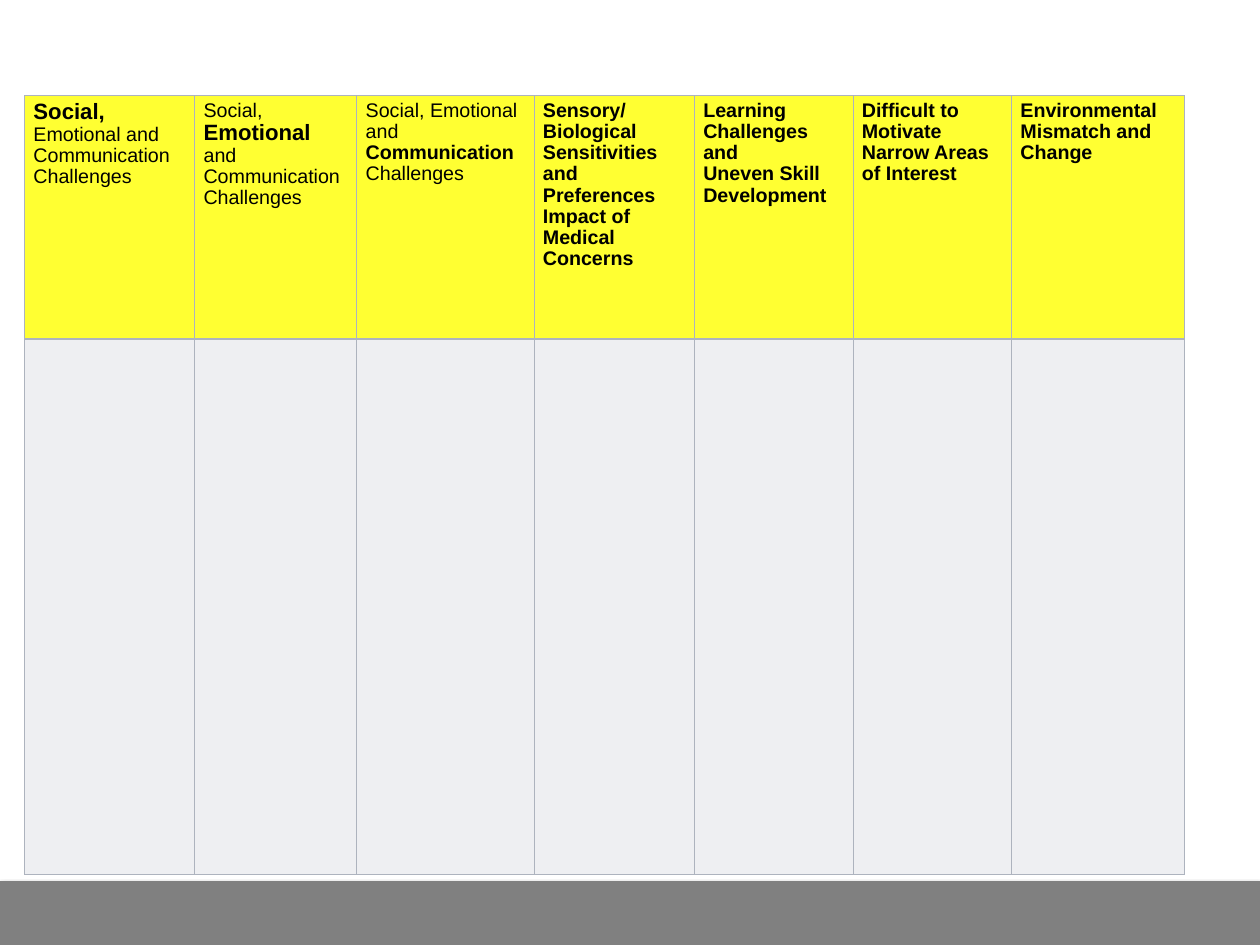
from lxml import etree
from pptx import Presentation
from pptx.dml.color import RGBColor
from pptx.enum.shapes import MSO_SHAPE
from pptx.enum.text import MSO_ANCHOR, PP_ALIGN
from pptx.oxml.ns import qn
from pptx.util import Pt

RECT = MSO_SHAPE.RECTANGLE
TOP = MSO_ANCHOR.TOP
LEFT = PP_ALIGN.LEFT
WIDTH, HEIGHT = 1023.84, 768.24
COLORS = {"page": "FFFFFF", "foot": "808080", "head": "FFFF32",
          "grid": "ADB3BE", "text": "000000"}

COLS = [138.24, 131.76, 144, 130.32, 128.88, 128.88, 140.4]
ROWS = [197.4, 435.6]

# Each heading is a list of paragraphs; each paragraph a list of (text, size, bold).
HEADS = [
    [[("Social, ", 18, True),
      ("Emotional and Communication Challenges", 16, False)]],
    [[("Social, ", 16, False), ("Emotional ", 18, True),
      ("and Communication Challenges", 16, False)]],
    [[("Social, Emotional and ", 16, False), ("Communication ", 16, True),
      ("Challenges", 16, False)]],
] + [[[(line, 16, True)] for line in lines] for lines in (
    ("Sensory/Biological Sensitivities and Preferences",
     "Impact of Medical Concerns"),
    ("Learning Challenges and", "Uneven Skill Development"),
    ("Difficult to Motivate", "Narrow Areas of Interest"),
    ("Environmental Mismatch and", "Change"),
)]


def color(name):
    return RGBColor.from_string(COLORS[name])


def node(parent, tag, **attrs):
    """Add an XML child such as a:ln with the given attributes."""
    return etree.SubElement(parent, qn(tag),
                            {key: str(val) for key, val in attrs.items()})


def write(para, text, size=16, bold=False, font="Arial", tint="text"):
    """Add one formatted run to a paragraph."""
    run = para.add_run()
    run.text = text
    run.font.name = font
    run.font.size = Pt(size)
    run.font.bold = bold
    run.font.color.rgb = color(tint)


class Page:
    def __init__(self, slide):
        self.slide = slide
        back = slide.background.fill
        back.solid()
        back.fore_color.rgb = color("page")

    def bar(self, x, y, w, h, tint):
        """Draw a filled band with a soft shadow."""
        band = self.slide.shapes.add_shape(RECT, Pt(x), Pt(y), Pt(w), Pt(h))
        band.fill.solid()
        band.fill.fore_color.rgb = color(tint)
        band.line.fill.background()
        band.shadow.inherit = False
        effect = band._element.spPr.find(qn("a:effectLst"))
        shade = node(effect, "a:outerShdw", blurRad=Pt(3.1), dist=Pt(1.8),
                     dir=5400000, rotWithShape=0)
        tone = node(shade, "a:srgbClr", val=COLORS["text"])
        node(tone, "a:alpha", val=35000)

    def table(self, x, y, cols, rows):
        frame = self.slide.shapes.add_table(
            len(rows), len(cols), Pt(x), Pt(y), Pt(sum(cols)), Pt(sum(rows)))
        grid = frame.table
        grid.first_row = grid.horz_banding = False
        for col, width in zip(grid.columns, cols):
            col.width = Pt(width)
        for row, height in zip(grid.rows, rows):
            row.height = Pt(height)
        return grid

    def cell(self, cell, tint, alpha=100, top=1, bottom=1):
        """Give a cell its borders and fill."""
        props = cell._tc.get_or_add_tcPr()
        for side, width in (("L", 1), ("R", 1), ("T", top), ("B", bottom)):
            line = node(props, f"a:ln{side}", w=Pt(width))
            node(node(line, "a:solidFill"), "a:srgbClr", val=COLORS["grid"])
        cell.fill.solid()
        cell.fill.fore_color.rgb = color(tint)
        if alpha < 100:
            tone = props.find(qn("a:solidFill")).find(qn("a:srgbClr"))
            node(tone, "a:alpha", val=alpha * 1000)
        cell.vertical_anchor = TOP

    def label(self, cell, paras):
        frame = cell.text_frame
        for i, runs in enumerate(paras):
            para = frame.add_paragraph() if i else frame.paragraphs[0]
            para.alignment = LEFT
            para.line_spacing = 0.97
            for text, size, bold in runs:
                write(para, text, size=size, bold=bold)


def main():
    deck = Presentation()
    deck.slide_width, deck.slide_height = Pt(WIDTH), Pt(HEIGHT)
    page = Page(deck.slides.add_slide(deck.slide_layouts[6]))
    page.bar(0, 716.4, WIDTH, HEIGHT - 716.4, "foot")
    grid = page.table(20, 77.9, COLS, ROWS)
    for i, head in enumerate(HEADS):
        page.cell(grid.cell(0, i), "head", bottom=2)
        page.label(grid.cell(0, i), head)
        page.cell(grid.cell(1, i), "grid", alpha=20, top=2)
    deck.save("out.pptx")


if __name__ == "__main__":
    main()
